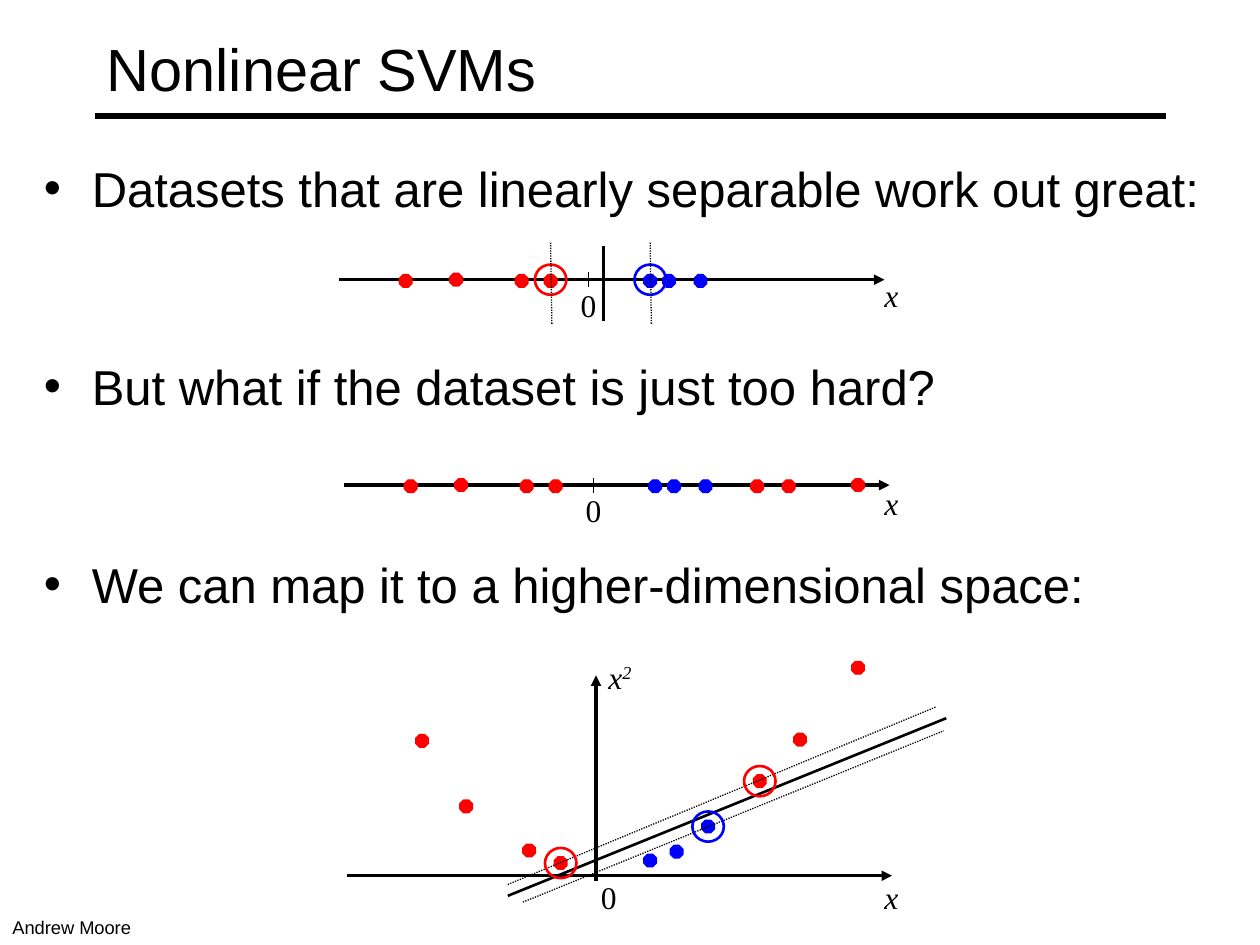
import pptx
import pptx.util
import pptx.dml.color
import pptx.enum.dml
import pptx.enum.shapes
import pptx.enum.text
import pptx.oxml.ns
import lxml.etree

INK = {"black": "000000", "red": "FF0000", "blue": "0000FF"}
SANS, SERIF = "Arial", "Times New Roman"
WIDE, HIGH = 10, 7.5
COLS, ROWS = 100, 75  # square grid cells
DOT = 1
RING = (2.5, 2.4)

# Offsets of the points from the left end of a number line
LEFT = [(5.3, 0.1), (9.3, 0), (14.5, 0.1), (16.8, 0.1)]
MID = [(24.7, 0.1), (26.2, 0.1), (28.7, 0.1)]
RIGHT = [(32.8, 0.1), (35.3, 0.1), (40.8, 0)]

# Points in the plane, by their centres
OUTER = [(33.5, 58.8), (37, 64), (42, 67.5), (44.5, 68.5),
         (60.3, 62), (63.5, 58.7), (68.1, 53)]
INNER = [(51.6, 68.3), (53.7, 67.6), (56.2, 65.6)]


def col(num):
    return pptx.util.Inches(num * WIDE / COLS)


def row(num):
    return pptx.util.Inches(num * HIGH / ROWS)


def tint(name):
    return pptx.dml.color.RGBColor.from_string(INK[name])


def tag(node, name, **attrs):
    return lxml.etree.SubElement(node, pptx.oxml.ns.qn(name), attrs)


def line(shapes, start, end, width, dash=False, arrow=False):
    link = shapes.add_connector(
        pptx.enum.shapes.MSO_CONNECTOR.STRAIGHT,
        col(start[0]), row(start[1]), col(end[0]), row(end[1]))
    link.line.color.rgb = tint("black")
    link.line.width = pptx.util.Pt(width)
    if dash:
        link.line.dash_style = pptx.enum.dml.MSO_LINE.ROUND_DOT
    if arrow:
        tag(link.line._get_or_add_ln(), "a:tailEnd", type="triangle")
    tag(link._element.spPr, "a:effectLst")


def mark(shapes, kind, mid, size, hue, width, full):
    item = shapes.add_shape(
        kind, col(mid[0] - size[0] / 2), row(mid[1] - size[1] / 2),
        col(size[0]), row(size[1]))
    item.shadow.inherit = False
    if full:
        item.fill.solid()
        item.fill.fore_color.rgb = tint(hue)
    else:
        item.fill.background()
    item.line.color.rgb = tint(hue)
    item.line.width = pptx.util.Pt(width)


def dots(shapes, mids, hue):
    for mid in mids:
        mark(shapes, pptx.enum.shapes.MSO_SHAPE.OCTAGON, mid,
             (DOT, DOT), hue, 0.75, True)


def ring(shapes, mid, hue):
    mark(shapes, pptx.enum.shapes.MSO_SHAPE.OVAL, mid, RING, hue, 1.5, False)


def box(shapes, left, top, width, height, wrap=True):
    frame = shapes.add_textbox(
        col(left), row(top), col(width), row(height)).text_frame
    frame.word_wrap = wrap
    return frame


def put(para, text, size, font=SANS, slant=False, lift=False):
    run = para.add_run()
    run.text = text
    run.font.size = pptx.util.Pt(size)
    run.font.name = font
    run.font.italic = slant
    run.font.color.rgb = tint("black")
    if lift:
        run.font._element.set("baseline", "30000")


def label(shapes, left, top, text, power=""):
    para = box(shapes, left, top, 3.8 if text == "0" else 5, 4).paragraphs[0]
    put(para, text, 18, SERIF, text != "0")
    if power:
        put(para, power, 18, SERIF, True, True)


def bullets(shapes, texts):
    frame = box(shapes, 2.5, 11.7, 95.8, 55)
    frame.margin_top = row(0.85)
    for num, text in enumerate(texts):
        para = frame.add_paragraph() if num else frame.paragraphs[0]
        if num:
            para.space_before = pptx.util.Pt(79.5)
        props = para._p.get_or_add_pPr()
        props.set("marL", str(col(3.8)))
        props.set("indent", str(-col(3.8)))
        tag(props, "a:buFont", typeface=SANS)
        tag(props, "a:buChar", char="•")
        put(para, text, 28)


def axis(shapes, left, top):
    line(shapes, (left, top), (left + 43.3, top), 2, arrow=True)


def ruler(shapes, left, top, red, blue, name):
    """Number line with tick, zero, name and points."""
    axis(shapes, left, top)
    tick = left + 19.8
    line(shapes, (tick, top - 0.6), (tick, top + 0.6), 0.75)
    label(shapes, left + 18.2, top, "0")
    label(shapes, 69.2, name, "x")
    for mids, hue in ((red, "red"), (blue, "blue")):
        dots(shapes, [(left + x, top + y) for x, y in mids], hue)


def split(shapes):
    """Separable set with its border and margins."""
    left, top = 26.9, 22.2
    ruler(shapes, left, top, LEFT, MID, 21.4)
    line(shapes, (47.9, 19.5), (47.9, 25.5), 1.5)
    for (x, y), hue in ((LEFT[-1], "red"), (MID[0], "blue")):
        ring(shapes, (left + x, top + y - 0.1), hue)
        line(shapes, (left + x + 0.1, 25.7), (left + x, 19.2), 0.75, dash=True)


def plane(shapes):
    """Set lifted to two dimensions."""
    axis(shapes, 27.5, 69.5)
    line(shapes, (47.3, 69.9), (47.3, 53.6), 2, arrow=True)
    dots(shapes, OUTER, "red")
    dots(shapes, INNER, "blue")
    label(shapes, 47.3, 51.7, "x", "2")
    line(shapes, (40.3, 71.1), (75.1, 57), 1.5)
    line(shapes, (40.3, 70.2), (74.3, 56.1), 0.75, dash=True)
    line(shapes, (41.5, 71.6), (74.9, 58), 0.75, dash=True)
    for mid, hue in ((OUTER[4], "red"), (INNER[2], "blue"), (OUTER[3], "red")):
        ring(shapes, mid, hue)
    label(shapes, 46.7, 69.2, "0")
    label(shapes, 69.2, 69.2, "x")


def main():
    deck = pptx.Presentation()
    deck.slide_width, deck.slide_height = col(COLS), row(ROWS)
    shapes = deck.slides.add_slide(deck.slide_layouts[6]).shapes

    # Title and rule
    line(shapes, (7.5, 9.2), (92.5, 9.2), 3)
    title = box(shapes, 7.5, 0.8, 85, 9.2)
    title.vertical_anchor = pptx.enum.text.MSO_ANCHOR.MIDDLE
    put(title.paragraphs[0], "Nonlinear SVMs", 34)

    # Body
    bullets(shapes, ["Datasets that are linearly separable work out great:",
                     "But what if the dataset is just too hard?",
                     "We can map it to a higher-dimensional space:"])

    # Diagrams
    split(shapes.add_group_shape().shapes)
    ruler(shapes.add_group_shape().shapes, 27.3, 38.5,
          LEFT + RIGHT, MID, 37.9)
    plane(shapes.add_group_shape().shapes)

    # Credit
    credit = box(shapes, 0, 72.2, 11.5, 2.9, wrap=False)
    put(credit.paragraphs[0], "Andrew Moore", 10.5)
    deck.save("out.pptx")


if __name__ == "__main__":
    main()
